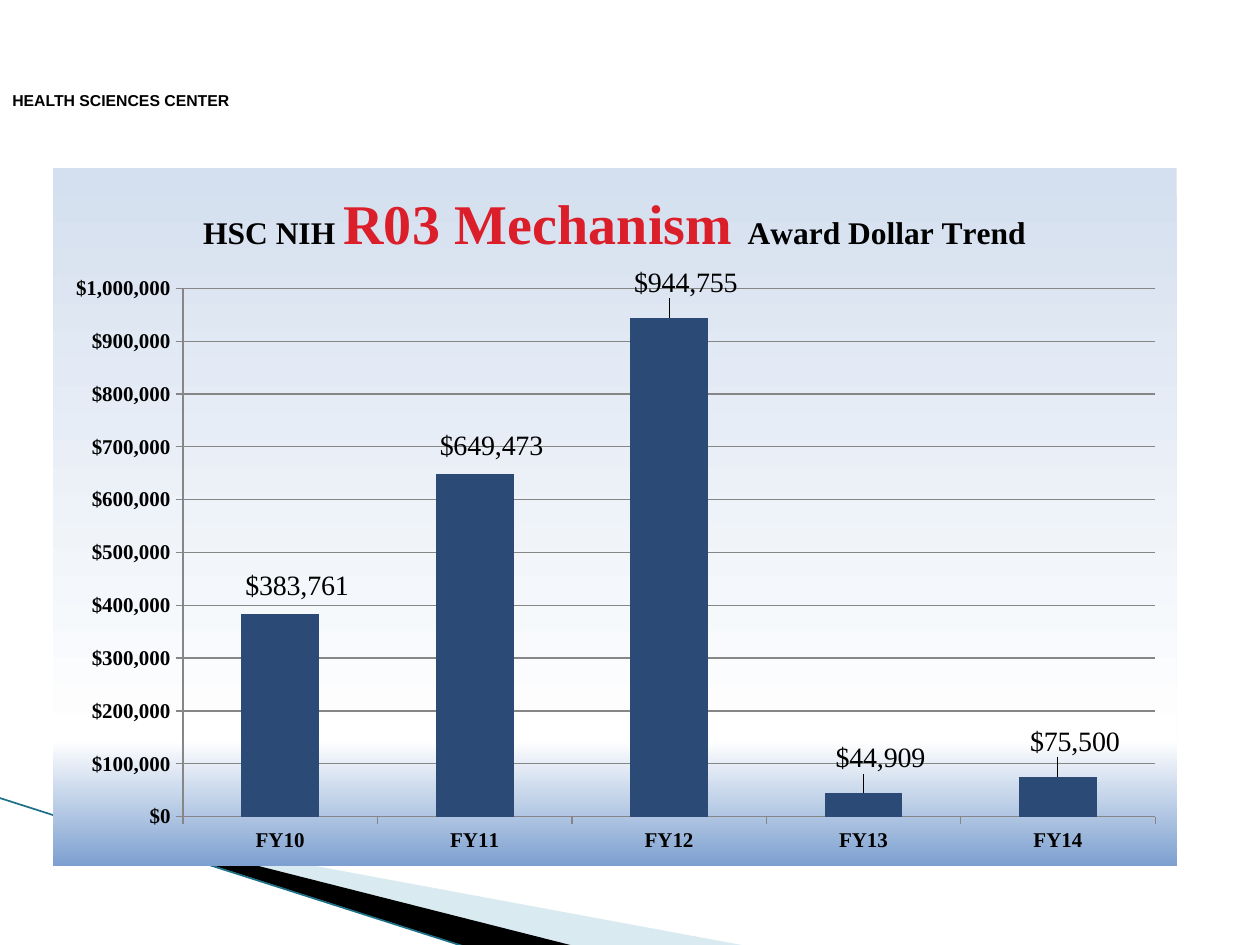
from lxml import etree
from pptx import Presentation
from pptx import util as u
from pptx.chart.data import CategoryChartData
from pptx.dml.color import RGBColor
from pptx.enum import chart as charts, shapes, text
from pptx.oxml import parse_xml
from pptx.oxml.ns import qn

COLORS = {"black": "000000", "red": "DB1F2A", "bar": "2B4A76", "grid": "868686",
          "pale": "A0CBDC", "teal": "1B6F86"}
SERIF = "Times New Roman"
MONEY = '"$"#,##0'
NAMESPACES = ('xmlns:a="http://schemas.openxmlformats.org/drawingml/2006/main" '
              'xmlns:c="http://schemas.openxmlformats.org/drawingml/2006/chart"')

# Content
HEADER = "HEALTH SCIENCES CENTER"
TITLE = [("HSC NIH ", 18, "black"), ("R03 Mechanism ", 32, "red"),
         ("Award Dollar Trend", 18, "black")]
AWARDS = {"FY10": 383761, "FY11": 649473, "FY12": 944755, "FY13": 44909, "FY14": 75500}
LABEL_RIGHT = 0.015
LABEL_LIFTS = [0.01, 0.01, 0.02, 0.02, 0.02]
BACKGROUND_STOPS = [(0, "D4DFEF"), (82, "FFFFFF"), (100, "7DA0D0")]

# Corner wedges: points in cm, colour, opacity in percent
WEDGES = [
    ([(1.4, 16.54), (15.11, 19.08), (11.58, 19.08), (1.4, 16.51)], "pale", 40),
    ([(1.35, 16.48), (11.61, 19.08), (9.45, 19.1), (1.37, 16.51)], "black", 100),
]


def rgb(name):
    return RGBColor.from_string(COLORS[name])


def style(font, size, color="black", bold=False, name=SERIF):
    font.size, font.bold, font.name = u.Pt(size), bold, name
    font.color.rgb = rgb(color)


def layout(x, y, width=None, height=None):
    """Manual chart layout; a size makes it an inner plot area."""
    inner = width is not None
    parts = '<c:layoutTarget val="inner"/>' if inner else ""
    if inner:
        parts += '<c:xMode val="edge"/><c:yMode val="edge"/>'
    parts += f'<c:x val="{x}"/><c:y val="{y}"/>'
    if inner:
        parts += f'<c:w val="{width}"/><c:h val="{height}"/>'
    return f"<c:layout {NAMESPACES}><c:manualLayout>{parts}</c:manualLayout></c:layout>"


def add_wedge(slide, points, color, opacity):
    points = [(u.Cm(x), u.Cm(y)) for x, y in points]
    builder = slide.shapes.build_freeform(*points[0], scale=1.0)
    builder.add_line_segments(points[1:], close=True)
    shape = builder.convert_to_shape()
    shape.shadow.inherit = False
    shape.fill.solid()
    shape.fill.fore_color.rgb = rgb(color)
    shape.line.fill.background()
    if opacity < 100:
        fill_color = shape.fill._xPr.find(f".//{qn('a:srgbClr')}")
        etree.SubElement(fill_color, qn("a:alpha")).set("val", str(opacity * 1000))


def add_header(slide):
    box = slide.shapes.add_textbox(0, u.Cm(1.7), u.Cm(4.98), u.Cm(0.64))
    box.text_frame.word_wrap = False
    box.text_frame.auto_size = text.MSO_AUTO_SIZE.SHAPE_TO_FIT_TEXT
    run = box.text_frame.paragraphs[0].add_run()
    run.text = HEADER
    style(run.font, 9, bold=True, name="Arial")


def add_award_chart(slide):
    data = CategoryChartData(number_format=MONEY)
    data.categories = list(AWARDS)
    data.add_series("Series 1", list(AWARDS.values()))
    chart = slide.shapes.add_chart(
        charts.XL_CHART_TYPE.COLUMN_CLUSTERED,
        u.Cm(1.06), u.Cm(3.38), u.Cm(22.66), u.Cm(14.07), data).chart
    chart.has_legend = False
    style(chart.font, 10)

    # Title
    chart.has_title = True
    paragraph = chart.chart_title.text_frame.paragraphs[0]
    for words, size, color in TITLE:
        run = paragraph.add_run()
        run.text = words
        style(run.font, size, color, bold=True)
    chart.chart_title.include_in_layout = False

    # Axes
    for axis in (chart.category_axis, chart.value_axis):
        style(axis.tick_labels.font, 12, bold=True)
        axis.major_tick_mark = charts.XL_TICK_MARK.OUTSIDE
        axis.format.line.color.rgb = rgb("grid")
        axis.format.line.width = u.Pt(0.75)
    axis = chart.value_axis
    axis.minimum_scale, axis.maximum_scale, axis.major_unit = 0, 1000000, 100000
    axis.tick_labels.number_format = MONEY
    axis.tick_labels.number_format_is_linked = False
    axis.major_gridlines.format.line.color.rgb = rgb("grid")
    axis.major_gridlines.format.line.width = u.Pt(0.75)

    # Bars and their labels
    plot = chart.plots[0]
    plot.gap_width = 150
    plot.vary_by_categories = False
    series = plot.series[0]
    series.format.fill.solid()
    series.format.fill.fore_color.rgb = rgb("bar")
    labels = series.data_labels
    labels.show_value = True
    labels.number_format = MONEY
    labels.number_format_is_linked = False
    labels.position = charts.XL_LABEL_POSITION.OUTSIDE_END
    style(labels.font, 16)
    for index, lift in enumerate(LABEL_LIFTS):
        labels._element.insert(index, parse_xml(
            f'<c:dLbl {NAMESPACES}><c:idx val="{index}"/>{layout(LABEL_RIGHT, -lift)}'
            '<c:dLblPos val="outEnd"/><c:showLegendKey val="0"/><c:showVal val="1"/>'
            '<c:showCatName val="0"/><c:showSerName val="0"/><c:showPercent val="0"/>'
            '<c:showBubbleSize val="0"/></c:dLbl>'))

    # Plot position and gradient background
    chart_element = chart._chartSpace.find(qn("c:chart"))
    plot_area = chart_element.find(qn("c:plotArea"))
    for old in plot_area.findall(qn("c:layout")):
        plot_area.remove(old)
    plot_area.insert(0, parse_xml(layout(0.116, 0.173, 0.865, 0.757)))
    stops = "".join(f'<a:gs pos="{place * 1000}"><a:srgbClr val="{color}"/></a:gs>'
                    for place, color in BACKGROUND_STOPS)
    chart_element.addnext(parse_xml(
        f'<c:spPr {NAMESPACES}><a:gradFill><a:gsLst>{stops}</a:gsLst>'
        '<a:lin ang="5400000" scaled="0"/></a:gradFill><a:ln><a:noFill/></a:ln></c:spPr>'))


def main():
    presentation = Presentation()
    presentation.slide_width, presentation.slide_height = u.Cm(25.4), u.Cm(19.05)
    slide = presentation.slides.add_slide(presentation.slide_layouts[6])

    # Corner decoration
    for points, color, opacity in WEDGES:
        add_wedge(slide, points, color, opacity)
    edge = slide.shapes.add_connector(shapes.MSO_CONNECTOR.STRAIGHT, u.Cm(-0.03),
                                      u.Cm(16.08), u.Cm(9.42), u.Cm(19.1))
    edge.line.color.rgb = rgb("teal")
    edge.line.width = u.Pt(0.95)
    etree.SubElement(edge._element.spPr, qn("a:effectLst"))

    add_header(slide)
    add_award_chart(slide)
    presentation.save("out.pptx")


if __name__ == "__main__":
    main()
